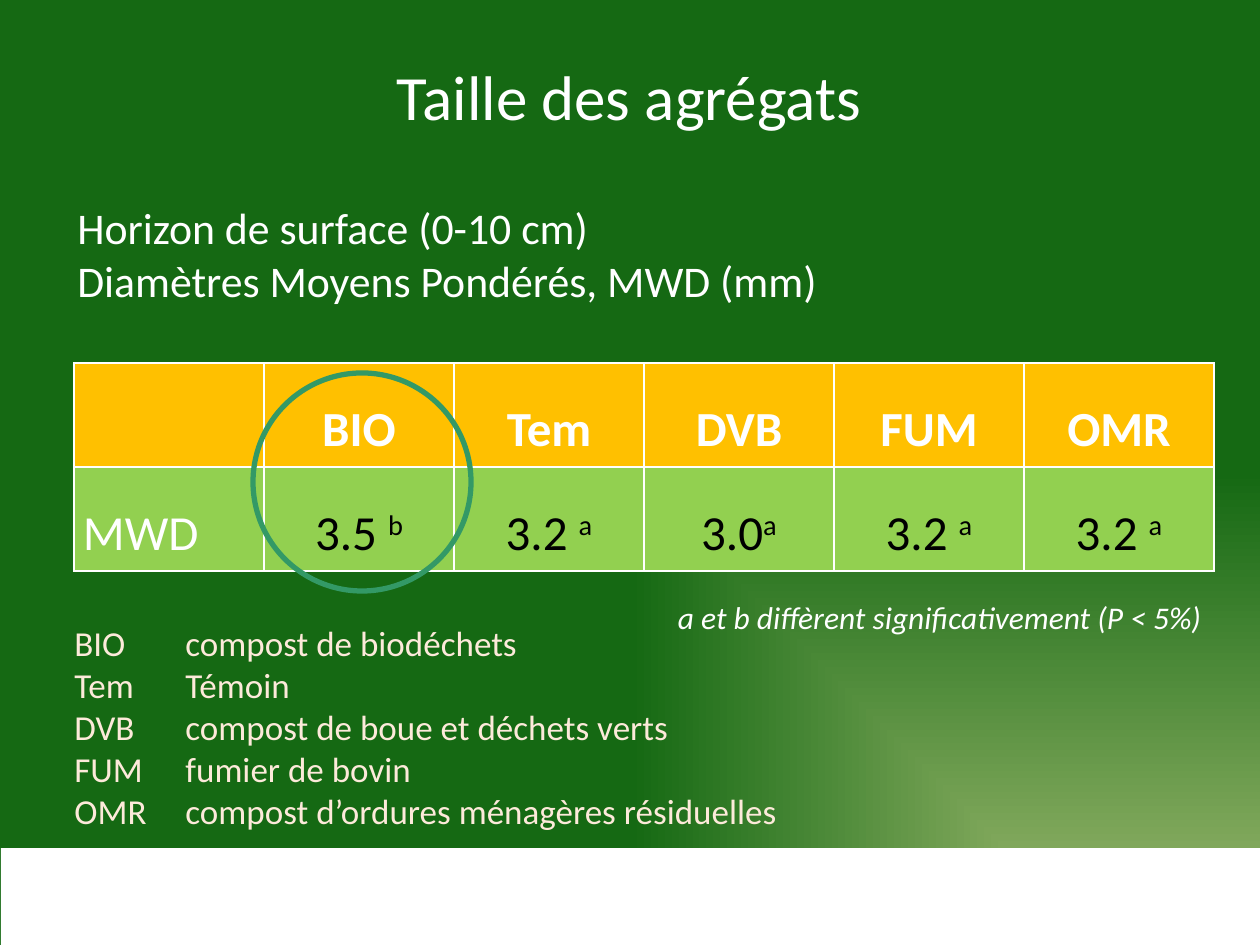
import pptx
import pptx.util
import pptx.dml.color
import pptx.enum.shapes
import pptx.enum.text
import pptx.oxml
import pptx.oxml.ns

RGB = pptx.dml.color.RGBColor
ALIGN = pptx.enum.text.PP_ALIGN
ANCHOR = pptx.enum.text.MSO_ANCHOR
AUTO_SIZE = pptx.enum.text.MSO_AUTO_SIZE
SHAPE = pptx.enum.shapes.MSO_SHAPE

WHITE = RGB(0xFF, 0xFF, 0xFF)
BLACK = RGB(0x00, 0x00, 0x00)
AMBER = RGB(0xFF, 0xC0, 0x00)
LIME = RGB(0x92, 0xD0, 0x50)
CREAM = RGB(0xFD, 0xEA, 0xDA)
TEAL = RGB(0x33, 0x99, 0x66)
PALE = RGB(0xDD, 0xEB, 0xCF)
SAGE = RGB(0x9C, 0xB8, 0x6E)
FOREST = RGB(0x15, 0x69, 0x13)

PX = 914400 / 126
NS = pptx.oxml.ns.nsdecls("a")


def box(*lengths):
    return [pptx.util.Emu(round(length * PX)) for length in lengths]


def write(paragraph, text, size, color, **format_values):
    run = paragraph.add_run()
    run.text = text
    run.font.color.rgb = color
    values = {"name": "Calibri", "size": pptx.util.Pt(size), **format_values}
    for key, value in values.items():
        setattr(run.font, key, value)
    return run


deck = pptx.Presentation()
deck.slide_width, deck.slide_height = box(1260, 945)
slide = deck.slides.add_slide(deck.slide_layouts[5])

slide.background.fill.gradient()
gradient = slide.background._cSld.bg.bgPr.find(pptx.oxml.ns.qn("a:gradFill"))
stops = "".join(
    f'<a:gs pos="{position}"><a:srgbClr val="{color}"/></a:gs>'
    for position, color in [(0, PALE), (0, PALE), (0, SAGE), (100000, FOREST)]
)
gradient.getparent().replace(gradient, pptx.oxml.parse_xml(
    f'<a:gradFill {NS} rotWithShape="1"><a:gsLst>{stops}</a:gsLst>'
    '<a:path path="rect"><a:fillToRect l="100000" t="100000"/></a:path></a:gradFill>'
))

footer_band = slide.shapes.add_shape(SHAPE.RECTANGLE, *box(1, 848, 1259, 97))
footer_band.shadow.inherit = False
footer_band.fill.solid()
footer_band.fill.fore_color.rgb = WHITE
footer_band.line.fill.background()

title = slide.shapes.title
title.left, title.top, title.width, title.height = box(62, 16, 1134, 158)
title.text_frame.vertical_anchor = ANCHOR.MIDDLE
title.text_frame.paragraphs[0].alignment = ALIGN.CENTER
write(title.text_frame.paragraphs[0], "Taille des agrégats", 36, WHITE)

treatments = ["BIO", "Tem", "DVB", "FUM", "OMR"]
diameters = [("3.5 ", "b"), ("3.2 ", "a"), ("3.0", "a"), ("3.2 ", "a"), ("3.2 ", "a")]
rows = [[(name, "") for name in ["", *treatments]], [("MWD", ""), *diameters]]
row_fills = [AMBER, LIME]

mwd_frame = slide.shapes.add_table(2, 6, *box(74, 363, 1140, 208))
mwd_table = mwd_frame.table
for column in mwd_table.columns:
    column.width = box(190)[0]
for r, row in enumerate(rows):
    mwd_table.rows[r].height = box(104)[0]
    for c, (value, group) in enumerate(row):
        cell = mwd_table.cell(r, c)
        cell.fill.solid()
        cell.fill.fore_color.rgb = row_fills[r]
        margin = box(9)[0]
        cell_format = {"vertical_anchor": ANCHOR.MIDDLE, "margin_left": margin,
                       "margin_right": margin, "margin_top": 0, "margin_bottom": 0}
        for key, setting in cell_format.items():
            setattr(cell, key, setting)
        for position, side in enumerate(["lnL", "lnR", "lnT", "lnB"]):
            cell._tc.get_or_add_tcPr().insert(position, pptx.oxml.parse_xml(
                f'<a:{side} {NS} w="12700"><a:solidFill><a:srgbClr val="{WHITE}"/>'
                f'</a:solidFill></a:{side}>'
            ))
        paragraph = cell.text_frame.paragraphs[0]
        paragraph.alignment = ALIGN.CENTER if c else ALIGN.JUSTIFY
        paragraph.line_spacing = 1.5
        if value:
            write(paragraph, value, 28, BLACK if r and c else WHITE, bold=r == 0)
        if group:
            letter = write(paragraph, group, 28, BLACK, bold=False)
            letter._r.get_or_add_rPr().set("baseline", "30000")

legend = [
    "BIO \tcompost de biodéchets",
    "Tem\tTémoin",
    "DVB \tcompost de boue et déchets verts",
    "FUM \tfumier de bovin",
    "OMR \tcompost d’ordures ménagères résiduelles",
]
measure = ["Horizon de surface (0-10 cm)", "Diamètres Moyens Pondérés, MWD (mm)"]
significance = ["a et b diffèrent significativement (P < 5%)"]
texts = [
    (significance, (74, 592, 1140, 50), 18, WHITE, ALIGN.RIGHT, True, True),
    (legend, (62, 615, 777, 224), 20, CREAM, ALIGN.LEFT, False, True),
    (measure, (65, 195, 775, 118), 25, WHITE, ALIGN.LEFT, False, False),
]
for lines, place, size, color, alignment, italic, wrap in texts:
    frame = slide.shapes.add_textbox(*box(*place)).text_frame
    for key, setting in {"word_wrap": wrap, "auto_size": AUTO_SIZE.SHAPE_TO_FIT_TEXT}.items():
        setattr(frame, key, setting)
    for i, line in enumerate(lines):
        paragraph = frame.add_paragraph() if i else frame.paragraphs[0]
        paragraph.alignment = alignment
        if "\t" in line:
            paragraph._p.get_or_add_pPr().append(pptx.oxml.parse_xml(
                f'<a:tabLst {NS}><a:tab pos="{box(111)[0]}" algn="l"/></a:tabLst>'
            ))
        write(paragraph, line, size, color, italic=italic)

bio_circle = slide.shapes.add_shape(SHAPE.OVAL, *box(253, 373, 218, 218))
bio_circle.shadow.inherit = False
bio_circle.fill.background()
bio_circle.line.color.rgb = TEAL
bio_circle.line.width = pptx.util.Pt(3)

deck.save("out.pptx")
